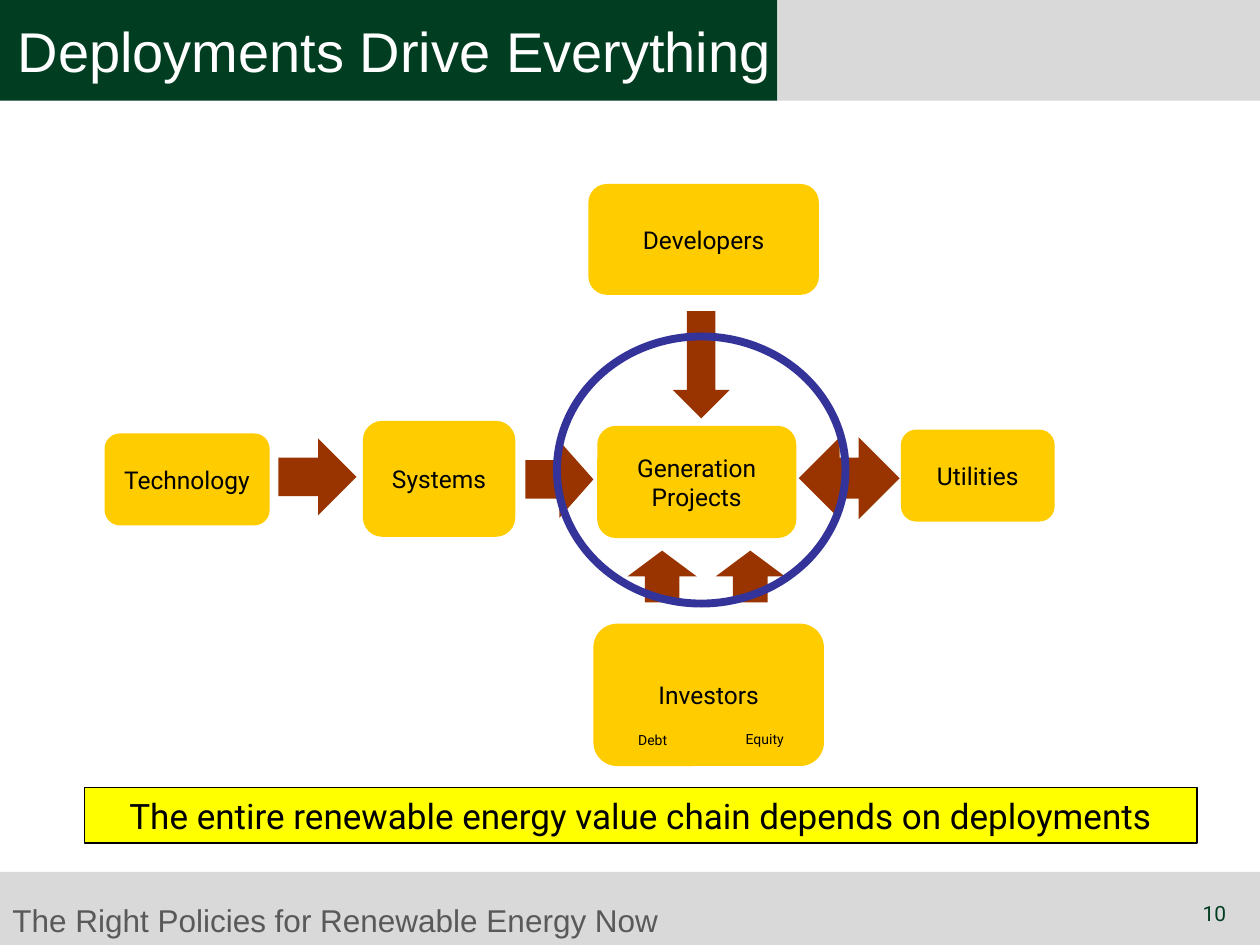
import pptx
from pptx.dml.color import RGBColor
from pptx.enum.shapes import MSO_SHAPE
from pptx.enum.text import MSO_ANCHOR, PP_ALIGN
from pptx.util import Inches, Pt

GREEN = RGBColor(0x01, 0x3D, 0x21)
GREY = RGBColor(0xD9, 0xD9, 0xD9)
SLATE = RGBColor(0x59, 0x59, 0x59)
GOLD = RGBColor(0xFF, 0xCC, 0x00)
RUST = RGBColor(0x99, 0x33, 0x00)
BLUE = RGBColor(0x33, 0x33, 0x99)
YELLOW = RGBColor(0xFF, 0xFF, 0x00)
BLACK = RGBColor(0, 0, 0)
WHITE = RGBColor(0xFF, 0xFF, 0xFF)

TITLE = "Deployments Drive Everything"
FOOTER = "The Right Policies for Renewable Energy Now"
BANNER = "The entire renewable energy value chain depends on deployments"
NUMBER = "10"

# Places are left, top, width, height in inches.
BANDS = [
    ((0, 6.92, 10, 0.58), GREY),
    ((0, 0, 6.17, 0.8), GREEN),
    ((6.17, 0, 3.83, 0.8), GREY),
]
PLAYERS = [
    ("Investors", (4.71, 4.95, 1.83, 1.13)),
    ("Technology", (0.83, 3.44, 1.31, 0.73)),
    ("Utilities", (7.15, 3.41, 1.22, 0.73)),
    ("Systems", (2.88, 3.34, 1.21, 0.92)),
    ("Generation Projects", (4.74, 3.38, 1.58, 0.89)),
    ("Developers", (4.67, 1.46, 1.83, 0.88)),
]
ARROWS = [
    (MSO_SHAPE.RIGHT_ARROW, (2.21, 3.48, 0.62, 0.61)),
    (MSO_SHAPE.RIGHT_ARROW, (4.17, 3.5, 0.54, 0.61)),
    (MSO_SHAPE.LEFT_RIGHT_ARROW, (6.34, 3.47, 0.8, 0.65)),
    (MSO_SHAPE.DOWN_ARROW, (5.34, 2.47, 0.45, 0.85)),
    (MSO_SHAPE.UP_ARROW, (4.98, 4.37, 0.55, 0.41)),
    (MSO_SHAPE.UP_ARROW, (5.68, 4.37, 0.55, 0.41)),
]
FUNDS = [
    ("Debt", (4.74, 5.58, 0.88, 0.59)),
    ("Equity", (5.61, 5.57, 0.92, 0.59)),
]


def add_shape(slide, kind, place, fill=None, line=None, width=0.75):
    shape = slide.shapes.add_shape(kind, *map(Inches, place))
    shape.shadow.inherit = False
    if fill is None:
        shape.fill.background()
    else:
        shape.fill.solid()
        shape.fill.fore_color.rgb = fill
    if line is None:
        shape.line.fill.background()
    else:
        shape.line.color.rgb = line
        shape.line.width = Pt(width)
    return shape


def write(shape, text, size, color=BLACK, face="Roboto",
          align=PP_ALIGN.CENTER, anchor=MSO_ANCHOR.MIDDLE, wrap=True):
    frame = shape.text_frame
    frame.text = text
    frame.word_wrap = wrap
    frame.vertical_anchor = anchor
    para = frame.paragraphs[0]
    para.alignment = align
    font = para.runs[0].font
    font.size = Pt(size)
    font.name = face
    font.color.rgb = color


def add_text(slide, place, *words, **style):
    box = slide.shapes.add_textbox(*map(Inches, place))
    write(box, *words, anchor=MSO_ANCHOR.TOP, **style)


def add_title(slide):
    title = slide.shapes.title
    title.left, title.top, title.width, title.height = map(
        Inches, (0.04, 0.08, 6.13, 0.64))
    title.text_frame.margin_right = 0  # the line needs the full band
    write(title, TITLE, 32, WHITE, "Arial", PP_ALIGN.LEFT, wrap=False)
    slide.shapes._spTree.append(title._element)  # bring in front of the bands


def main():
    deck = pptx.Presentation()
    deck.slide_width, deck.slide_height = Inches(10), Inches(7.5)
    slide = deck.slides.add_slide(deck.slide_layouts[5])

    for place, fill in BANDS:
        add_shape(slide, MSO_SHAPE.RECTANGLE, place, fill)
    add_text(slide, (0, 7.1, 6.08, 0.4), FOOTER, 18, SLATE, "Arial",
             align=PP_ALIGN.LEFT)

    for name, place in PLAYERS:
        box = add_shape(slide, MSO_SHAPE.FLOWCHART_ALTERNATE_PROCESS,
                        place, GOLD)
        box.text_frame.margin_left = box.text_frame.margin_right = Inches(0.05)
        write(box, name, 14)
    for kind, place in ARROWS:
        add_shape(slide, kind, place, RUST)
    for name, place in FUNDS:
        write(add_shape(slide, MSO_SHAPE.BEVEL, place), name, 8)

    add_title(slide)
    banner = add_shape(slide, MSO_SHAPE.RECTANGLE, (0.67, 6.25, 8.83, 0.44),
                       YELLOW, BLACK)
    write(banner, BANNER, 20)
    add_shape(slide, MSO_SHAPE.OVAL, (4.42, 2.67, 2.29, 2.12),
              line=BLUE, width=4.5)
    add_text(slide, (9.08, 7.1, 0.75, 0.4), NUMBER, 12, GREEN,
             align=PP_ALIGN.RIGHT)
    deck.save("out.pptx")


if __name__ == "__main__":
    main()
